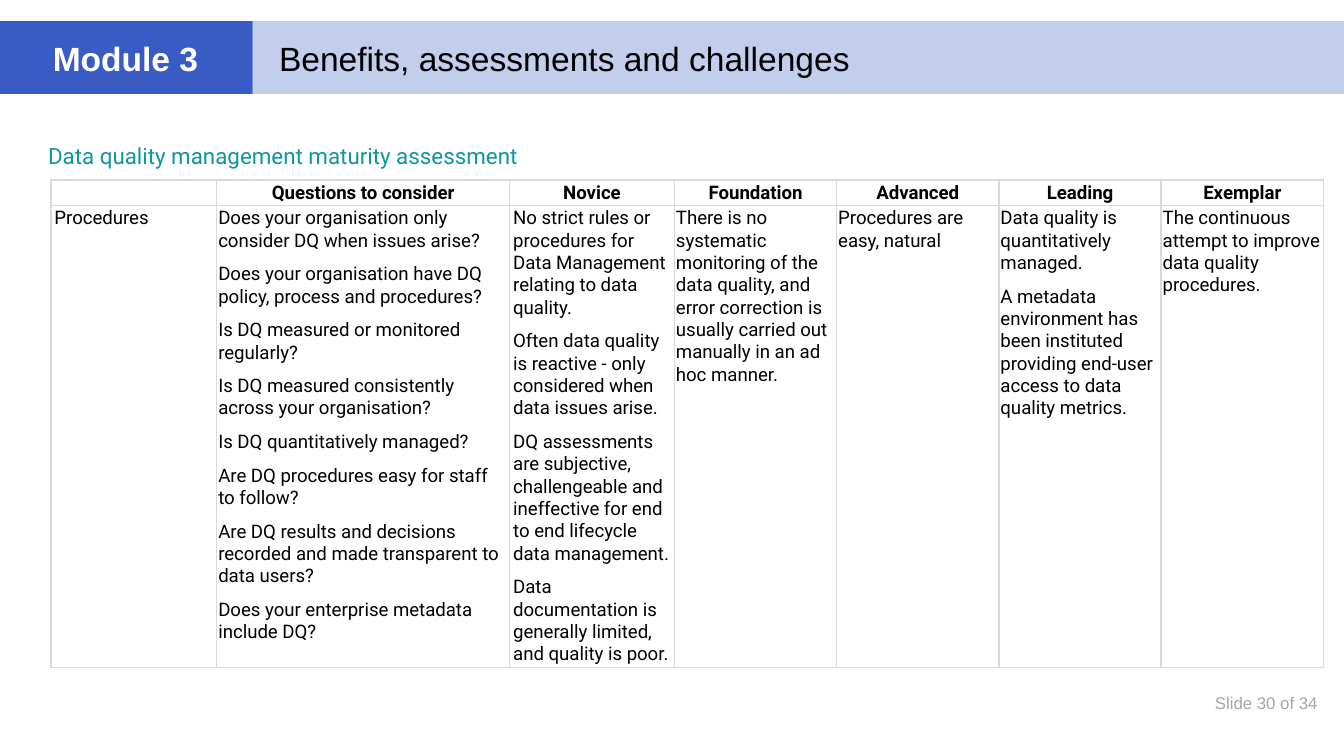
from dataclasses import dataclass

from lxml.etree import SubElement
from pptx import Presentation
from pptx.dml.color import RGBColor
from pptx.enum.shapes import MSO_SHAPE as Preset
from pptx.enum.text import MSO_ANCHOR as Anchor, MSO_AUTO_SIZE as AutoSize, PP_ALIGN as Align
from pptx.oxml.ns import qn
from pptx.slide import Slide
from pptx.table import _Cell as Cell
from pptx.text.text import TextFrame, _Paragraph as Paragraph
from pptx.util import Cm, Pt

BLACK = RGBColor(0x00, 0x00, 0x00)
WHITE = RGBColor(0xFF, 0xFF, 0xFF)
BLUE = RGBColor(0x38, 0x5C, 0xC4)
PALE_BLUE = RGBColor(0xC3, 0xCE, 0xED)
TEAL = RGBColor(0x0F, 0x97, 0x9B)
GREY = RGBColor(0xA6, 0xA6, 0xA6)
BORDER_GREY = RGBColor(0xD9, 0xD9, 0xD9)

BANNER_TOP, BANNER_HEIGHT = 0.4, 1.38
HEADER_HEIGHT, BODY_HEIGHT = 0.48, 8.74


@dataclass(frozen=True)
class Style:
    font: str
    size: float
    color: RGBColor
    bold: bool = False


@dataclass(frozen=True)
class Banner:
    text: str
    left: float
    width: float
    side_inset: float
    fill: RGBColor
    style: Style
    wrap: bool


@dataclass(frozen=True)
class Column:
    heading: str
    width: float
    side_inset: float
    entries: tuple[str, ...]


NUMBER_STYLE = Style("Arial", 9, GREY)
SUBTITLE_STYLE = Style("Roboto", 12, TEAL)
HEADING_STYLE = Style("Roboto", 10, BLACK, True)
ENTRY_STYLE = Style("Roboto", 10, BLACK)

BANNERS = (
    Banner("Benefits, assessments and challenges", 4.78, 20.65, 0.5, PALE_BLUE,
           Style("Arial", 18, BLACK), True),
    Banner("Module 3", 0, 4.78, 1, BLUE, Style("Arial", 18, WHITE, True), False),
)

COLUMNS = (
    Column("", 3.14, 0.07, ("Procedures",)),
    Column("Questions to consider", 5.54, 0.03, (
        "Does your organisation only consider DQ when issues arise?",
        "Does your organisation have DQ policy, process and procedures?",
        "Is DQ measured or monitored regularly?",
        "Is DQ measured consistently across your organisation?",
        "Is DQ quantitatively managed?",
        "Are DQ procedures easy for staff to follow?",
        "Are DQ results and decisions recorded and made transparent to data users?",
        "Does your enterprise metadata include DQ?",
    )),
    Column("Novice", 3.12, 0.07, (
        "No strict rules or procedures for Data Management relating to data quality.",
        "Often data quality is reactive - only considered when data issues arise.",
        "DQ assessments are subjective, challengeable and ineffective for end to end "
        "lifecycle data management.",
        "Data documentation is generally limited, and quality is poor.",
    )),
    Column("Foundation", 3.07, 0.03, (
        "There is no systematic monitoring of the data quality, and error correction is "
        "usually carried out manually in an ad hoc manner.",
    )),
    Column("Advanced", 3.07, 0.03, ("Procedures are easy, natural",)),
    Column("Leading", 3.07, 0.03, (
        "Data quality is quantitatively managed.",
        "A metadata environment has been instituted providing end-user access to data "
        "quality metrics.",
    )),
    Column("Exemplar", 3.07, 0.03, (
        "The continuous attempt to improve data quality procedures.",
    )),
)


def add_span(para: Paragraph, text: str, style: Style) -> None:
    span = para.add_run()
    span.text = text
    span.font.name = style.font
    span.font.size = Pt(style.size)
    span.font.bold = style.bold
    span.font.color.rgb = style.color


def set_insets(holder: TextFrame | Cell, side: float, edge: float) -> None:
    holder.margin_left = holder.margin_right = Cm(side)
    holder.margin_top = holder.margin_bottom = Cm(edge)


def add_banner(page: Slide, banner: Banner) -> None:
    shape = page.shapes.add_shape(Preset.RECTANGLE, Cm(banner.left), Cm(BANNER_TOP),
                                  Cm(banner.width), Cm(BANNER_HEIGHT))
    shape.shadow.inherit = False
    shape.fill.solid()
    shape.fill.fore_color.rgb = banner.fill
    shape.line.fill.background()
    frame = shape.text_frame
    frame.word_wrap = banner.wrap
    frame.vertical_anchor = Anchor.MIDDLE
    set_insets(frame, banner.side_inset, 0.3)
    para = frame.paragraphs[0]
    para.alignment = Align.LEFT
    add_span(para, banner.text, banner.style)


def add_subtitle(page: Slide) -> None:
    box = page.shapes.add_textbox(Cm(0.81), Cm(2.34), Cm(12.5), Cm(10.74))
    frame = box.text_frame
    frame.word_wrap = True
    set_insets(frame, 0.1, 0.1)
    para = frame.paragraphs[0]
    para.line_spacing = 1.5
    para.space_before = para.space_after = Pt(3)
    add_span(para, "Data quality management maturity assessment", SUBTITLE_STYLE)


def add_slide_number(page: Slide) -> None:
    box = page.shapes.add_textbox(Cm(21.47), Cm(12.91), Cm(3.96), Cm(1.4))
    frame = box.text_frame
    frame.word_wrap = False
    frame.auto_size = AutoSize.SHAPE_TO_FIT_TEXT
    set_insets(frame, 0.5, 0.5)
    frame.margin_left = Cm(1.5)
    para = frame.paragraphs[0]
    para.alignment = Align.RIGHT
    para.space_after = Pt(6)
    add_span(para, "Slide 30 of 34", NUMBER_STYLE)


def add_borders(cell: Cell) -> None:
    properties = cell._tc.get_or_add_tcPr()
    for side in ("a:lnL", "a:lnR", "a:lnT", "a:lnB"):
        line = SubElement(properties, qn(side), w=str(Pt(1)))
        fill = SubElement(line, qn("a:solidFill"))
        SubElement(fill, qn("a:srgbClr"), val=str(BORDER_GREY))


def fill_cell(cell: Cell, texts: tuple[str, ...], side_inset: float,
              style: Style, align: Align) -> None:
    add_borders(cell)
    cell.fill.background()
    set_insets(cell, side_inset, 0.03)
    frame = cell.text_frame
    for index, text in enumerate(texts):
        para = frame.add_paragraph() if index else frame.paragraphs[0]
        para.alignment = align
        para.line_spacing = Pt(12)
        para.space_before = para.space_after = Pt(3)
        if text:
            add_span(para, text, style)
        else:
            SubElement(para._p, qn("a:endParaRPr"), sz="900")


def add_maturity_table(page: Slide) -> None:
    width = sum(column.width for column in COLUMNS)
    frame = page.shapes.add_table(2, len(COLUMNS), Cm(0.96), Cm(3.4), Cm(width),
                                  Cm(HEADER_HEIGHT + BODY_HEIGHT))
    table = frame.table
    table.first_row = table.horz_banding = False
    table.rows[0].height = Cm(HEADER_HEIGHT)
    table.rows[1].height = Cm(BODY_HEIGHT)
    for index, column in enumerate(COLUMNS):
        table.columns[index].width = Cm(column.width)
        heading, body = table.cell(0, index), table.cell(1, index)
        fill_cell(heading, (column.heading,), column.side_inset, HEADING_STYLE, Align.CENTER)
        heading.vertical_anchor = Anchor.MIDDLE
        fill_cell(body, column.entries, column.side_inset, ENTRY_STYLE, Align.LEFT)


def main() -> None:
    deck = Presentation()
    deck.slide_width, deck.slide_height = Cm(25.43), Cm(14.3)
    page = deck.slides.add_slide(deck.slide_layouts[6])
    add_slide_number(page)
    for banner in BANNERS:
        add_banner(page, banner)
    add_subtitle(page)
    add_maturity_table(page)
    deck.save("out.pptx")


if __name__ == "__main__":
    main()
